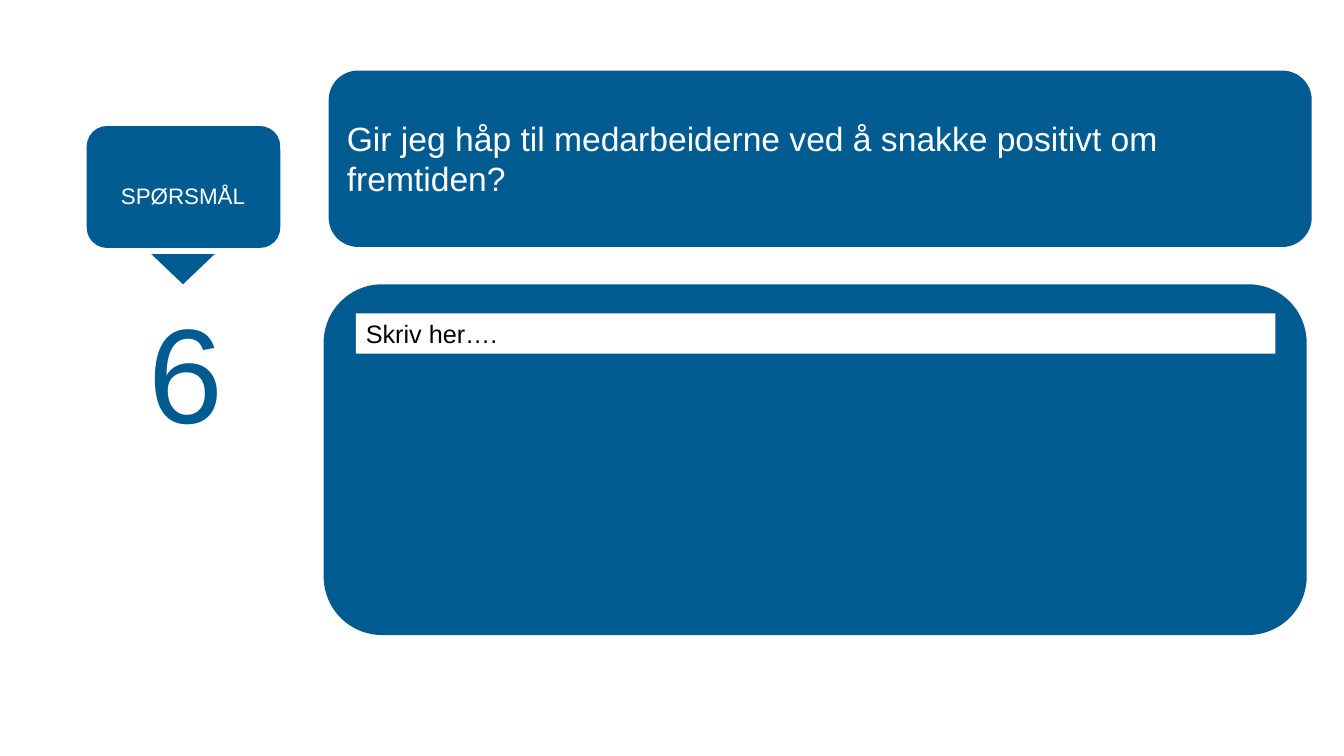
from dataclasses import dataclass

from pptx import Presentation, util as u
from pptx.dml import color
from pptx.enum import shapes, text

BLUE = "005B91"
WHITE = "FFFFFF"
BLACK = "000000"


@dataclass
class Label:
    words: str
    size: int
    colour: str
    align: text.PP_ALIGN = text.PP_ALIGN.LEFT
    anchor: text.MSO_ANCHOR = text.MSO_ANCHOR.MIDDLE


@dataclass
class Panel:
    kind: shapes.MSO_SHAPE
    box: tuple[float, float, float, float]
    fill: str
    rotation: int = 0
    label: Label | None = None


def rgb(value: str) -> color.RGBColor:
    return color.RGBColor.from_string(value)


def write(holder, label: Label) -> None:
    frame = holder.text_frame
    frame_format = {
        "word_wrap": True,
        "auto_size": text.MSO_AUTO_SIZE.NONE,
        "vertical_anchor": label.anchor,
        "margin_left": u.Inches(0.1),
        "margin_right": u.Inches(0.1),
        "margin_top": u.Inches(0.05),
        "margin_bottom": u.Inches(0.05),
    }
    for name, value in frame_format.items():
        setattr(frame, name, value)
    paragraph = frame.paragraphs[0]
    paragraph.alignment = label.align
    run = paragraph.add_run()
    run.text = label.words
    for name, value in {"name": "Arial", "size": u.Pt(label.size)}.items():
        setattr(run.font, name, value)
    run.font.color.rgb = rgb(label.colour)


def draw(parent, panel: Panel):
    shape = parent.add_shape(panel.kind, *map(u.Inches, panel.box))
    shape.rotation = panel.rotation
    shape.shadow.inherit = False
    shape.fill.solid()
    shape.fill.fore_color.rgb = rgb(panel.fill)
    shape.line.fill.background()
    if panel.label:
        write(shape, panel.label)
    return shape


def place_title(title, box: tuple[float, float, float, float], label: Label) -> None:
    for name, value in zip(("left", "top", "width", "height"), box):
        setattr(title, name, u.Inches(value))
    write(title, label)


def main() -> None:
    deck = Presentation()
    deck.slide_width, deck.slide_height = u.Inches(13.33), u.Inches(7.5)
    slide = deck.slides.add_slide(deck.slide_layouts[5])

    rounded = shapes.MSO_SHAPE.ROUNDED_RECTANGLE
    plain = shapes.MSO_SHAPE.RECTANGLE
    top = text.MSO_ANCHOR.TOP

    badge = slide.shapes.add_group_shape()
    draw(badge.shapes, Panel(rounded, (0.86, 1.25, 1.92, 1.21), BLUE))
    draw(badge.shapes, Panel(shapes.MSO_SHAPE.ISOSCELES_TRIANGLE,
                             (1.5, 2.52, 0.63, 0.3), BLUE, 180))
    caption = badge.shapes.add_textbox(*map(u.Inches, (0.89, 1.39, 1.85, 1.1)))
    write(caption, Label("SPØRSMÅL", 16, WHITE, text.PP_ALIGN.CENTER))

    question = draw(slide.shapes, Panel(rounded, (3.26, 0.7, 9.75, 1.75), BLUE))
    title = slide.shapes.title
    place_title(title, (3.34, 0.78, 9.58, 1.58),
                Label("Gir jeg håp til medarbeiderne ved å snakke positivt om fremtiden?",
                      24, WHITE))
    question.element.addnext(title.element)

    answer_area = [
        Panel(plain, (1.37, 2.82, 0.91, 1.72), WHITE,
              label=Label("6", 96, BLUE, anchor=top)),
        Panel(rounded, (3.21, 2.82, 9.75, 3.48), BLUE),
        Panel(plain, (3.53, 3.11, 9.12, 0.4), WHITE,
              label=Label("Skriv her….", 18, BLACK, anchor=top)),
    ]
    for panel in answer_area:
        draw(slide.shapes, panel)

    deck.save("out.pptx")


if __name__ == "__main__":
    main()
